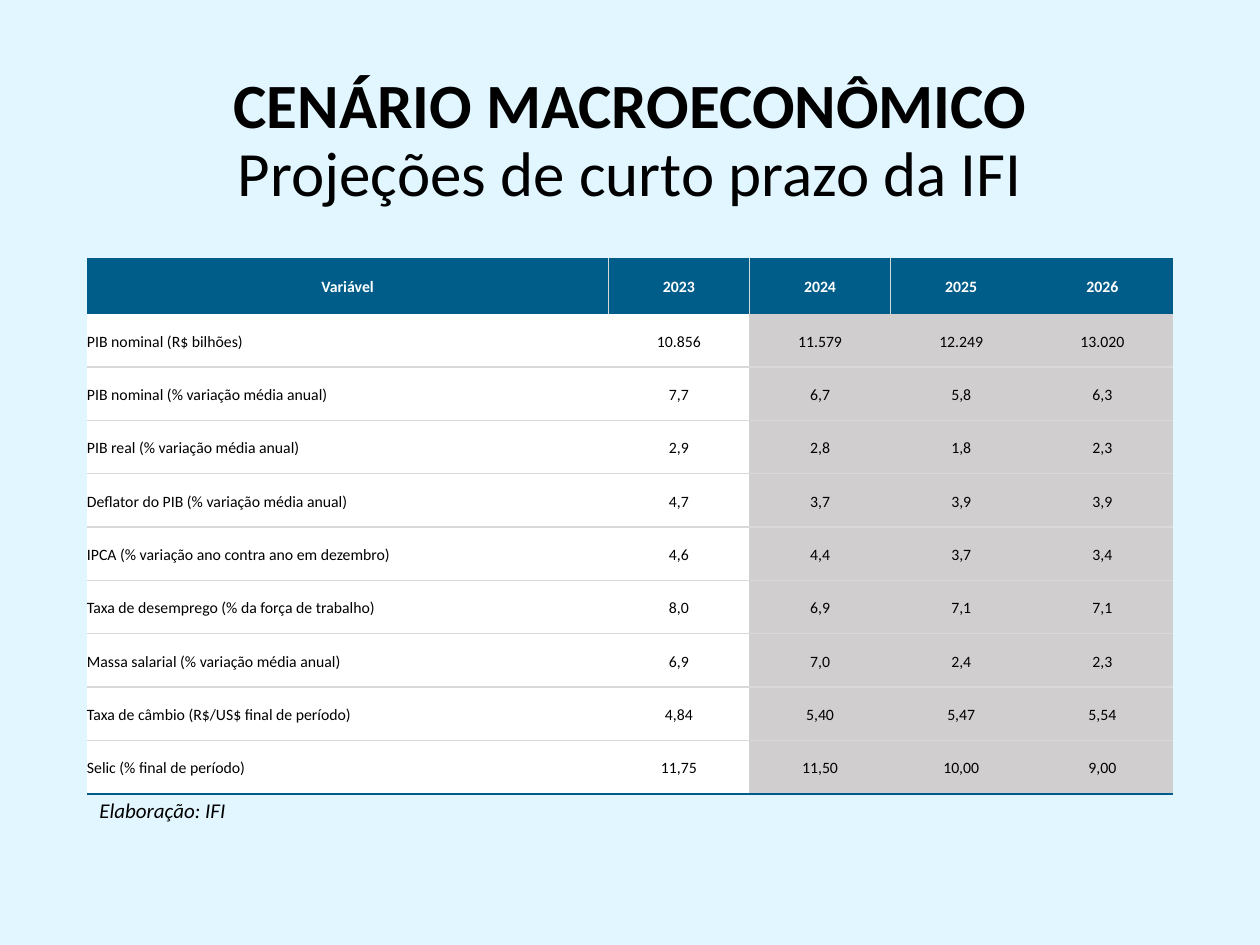
from lxml import etree
from pptx import Presentation
from pptx.dml.color import RGBColor
from pptx.enum.text import MSO_ANCHOR, PP_ALIGN
from pptx.oxml.ns import qn
from pptx.util import Inches, Pt

CENTER, JUSTIFY, LEFT = PP_ALIGN.CENTER, PP_ALIGN.JUSTIFY, PP_ALIGN.LEFT
MIDDLE, TOP = MSO_ANCHOR.MIDDLE, MSO_ANCHOR.TOP

FONT = "Calibri"
BACKGROUND, BLUE, RULE = "E2F6FF", "005D89", "D9D9D9"
WHITE, BLACK, PROJECTION = "FFFFFF", "000000", "D0CECE"

# Shared column of content
LEFT_EDGE, CONTENT_WIDTH = 0.69, 8.62
TABLE_TOP, TABLE_HEIGHT, HEADER_HEIGHT = 2.05, 4.25, 0.44
YEAR_WIDTH = 0.13 * CONTENT_WIDTH
FIRST_PROJECTION = 2

ROWS = [
    ("Variável", "2023", "2024", "2025", "2026"),
    ("PIB nominal (R$ bilhões)", "10.856", "11.579", "12.249", "13.020"),
    ("PIB nominal (% variação média anual)", "7,7", "6,7", "5,8", "6,3"),
    ("PIB real (% variação média anual)", "2,9", "2,8", "1,8", "2,3"),
    ("Deflator do PIB (% variação média anual)", "4,7", "3,7", "3,9", "3,9"),
    ("IPCA (% variação ano contra ano em dezembro)", "4,6", "4,4", "3,7", "3,4"),
    ("Taxa de desemprego (% da força de trabalho)", "8,0", "6,9", "7,1", "7,1"),
    ("Massa salarial (% variação média anual)", "6,9", "7,0", "2,4", "2,3"),
    ("Taxa de câmbio (R$/US$ final de período)", "4,84", "5,40", "5,47", "5,54"),
    ("Selic (% final de período)", "11,75", "11,50", "10,00", "9,00"),
]


def color(hex_string):
    return RGBColor.from_string(hex_string)


def format_paragraph(paragraph, size, align, spacing, hex_string=BLACK):
    paragraph.alignment = align
    paragraph.line_spacing = spacing
    for run in paragraph.runs:
        run.font.name = FONT
        run.font.size = Pt(size)
        run.font.color.rgb = color(hex_string)


def add_text(slide, text, top, height, size, align, anchor):
    box = slide.shapes.add_textbox(Inches(LEFT_EDGE), Inches(top),
                                   Inches(CONTENT_WIDTH), Inches(height))
    text_frame = box.text_frame
    text_frame.word_wrap = True
    text_frame.vertical_anchor = anchor
    text_frame.text = text
    paragraph = text_frame.paragraphs[0]
    format_paragraph(paragraph, size, align, 0.9)
    return paragraph


def set_borders(cell, borders):
    """Draw the given sides (L, R, T, B) and clear the others."""
    properties = cell._tc.get_or_add_tcPr()
    for side in "LRTB":
        line = etree.SubElement(properties, qn(f"a:ln{side}"))
        if side not in borders:
            etree.SubElement(line, qn("a:noFill"))
            continue
        hex_string, width = borders[side]
        line.set("w", str(Pt(width)))
        fill = etree.SubElement(line, qn("a:solidFill"))
        etree.SubElement(fill, qn("a:srgbClr")).set("val", hex_string)


def cell_borders(row, column):
    rule = (RULE, 1)
    if row == 0:
        borders = {"T": (BLUE, 1)}
        if 0 < column < 4:
            borders["L"] = rule
        if column < 3:
            borders["R"] = rule
        return borders
    borders = {"B": (BLUE, 1.5) if row == len(ROWS) - 1 else rule}
    if row > 1:
        borders["T"] = rule
    return borders


def format_cell(cell, text, row, column):
    header = row == 0
    cell.margin_left = cell.margin_right = 0
    cell.margin_top = cell.margin_bottom = 0
    cell.vertical_anchor = MIDDLE
    set_borders(cell, cell_borders(row, column))
    body_fill = PROJECTION if column >= FIRST_PROJECTION else WHITE
    cell.fill.solid()
    cell.fill.fore_color.rgb = color(BLUE if header else body_fill)

    cell.text_frame.text = text
    paragraph = cell.text_frame.paragraphs[0]
    align = CENTER if header or column else JUSTIFY
    format_paragraph(paragraph, 9, align, 1.15, WHITE if header else BLACK)
    paragraph.space_after = Pt(6)
    paragraph.runs[0].font.bold = header


def add_projection_table(slide):
    column_count = len(ROWS[0])
    table = slide.shapes.add_table(
        len(ROWS), column_count, Inches(LEFT_EDGE), Inches(TABLE_TOP),
        Inches(CONTENT_WIDTH), Inches(TABLE_HEIGHT)).table
    table.horz_banding = False

    label_width = CONTENT_WIDTH - (column_count - 1) * YEAR_WIDTH
    for index, column in enumerate(table.columns):
        column.width = Inches(YEAR_WIDTH if index else label_width)
    body_height = (TABLE_HEIGHT - HEADER_HEIGHT) / (len(ROWS) - 1)
    for index, row in enumerate(table.rows):
        row.height = Inches(body_height if index else HEADER_HEIGHT)

    for row, values in enumerate(ROWS):
        for column, text in enumerate(values):
            format_cell(table.cell(row, column), text, row, column)


def main():
    presentation = Presentation()
    presentation.slide_width, presentation.slide_height = Inches(10), Inches(7.5)
    slide = presentation.slides.add_slide(presentation.slide_layouts[6])
    slide.background.fill.solid()
    slide.background.fill.fore_color.rgb = color(BACKGROUND)

    # Title: bold first line, regular second line
    title = add_text(slide, "CENÁRIO MACROECONÔMICO\vProjeções de curto prazo da IFI",
                     0.4, 1.45, 36, CENTER, MIDDLE)
    title.runs[0].font.bold = True

    # Projections by year
    add_projection_table(slide)

    # Source line directly below the table
    source = add_text(slide, "Elaboração: IFI", TABLE_TOP + TABLE_HEIGHT, 0.5,
                      12, LEFT, TOP)
    source.runs[0].font.italic = True

    presentation.save("out.pptx")


if __name__ == "__main__":
    main()
